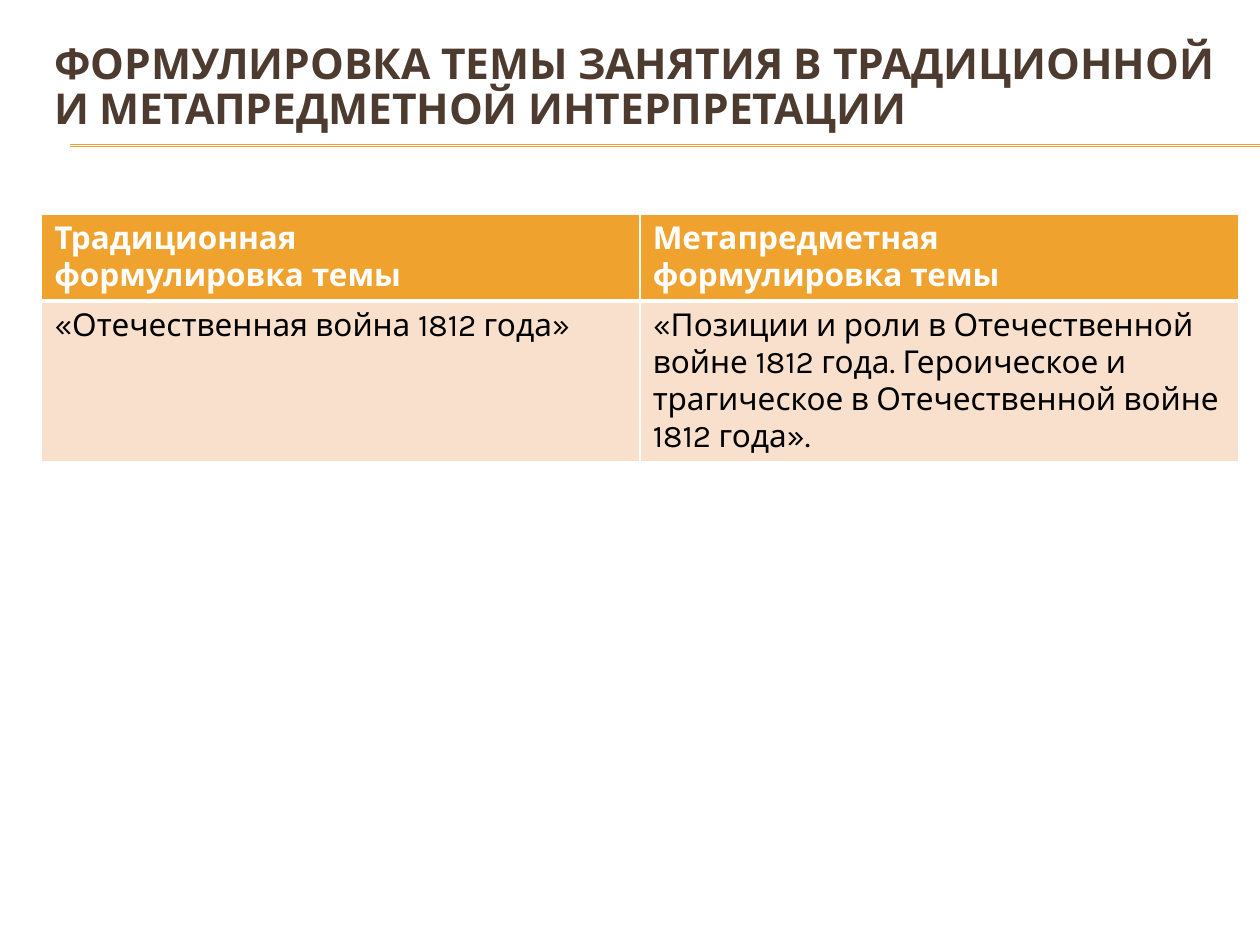
from lxml import etree
from pptx import Presentation
from pptx.dml.color import RGBColor
from pptx.enum import shapes, text
from pptx.oxml import ns
from pptx.util import Cm, Pt

# Content
TITLE = "ФОРМУЛИРОВКА ТЕМЫ ЗАНЯТИЯ В ТРАДИЦИОННОЙ И МЕТАПРЕДМЕТНОЙ ИНТЕРПРЕТАЦИИ"
ROWS = [
    ["Традиционная\nформулировка темы", "Метапредметная\nформулировка темы"],
    ["«Отечественная война 1812 года»",
     "«Позиции и роли в Отечественной войне 1812 года. "
     "Героическое и трагическое в Отечественной войне 1812 года»."],
]

# Look
FONT = "Karla"
BROWN = RGBColor(0x4E, 0x3B, 0x30)
ORANGE = RGBColor(0xF0, 0xA2, 0x2E)
PEACH = RGBColor(0xF9, 0xE0, 0xCD)
WHITE = RGBColor(0xFF, 0xFF, 0xFF)
BLACK = RGBColor(0, 0, 0)
# fill, text colour, bold, bottom border in points
ROW_STYLES = [(ORANGE, WHITE, True, 3), (PEACH, BLACK, False, 1)]
ROW_HEIGHTS = [Cm(1.71), Cm(3.23)]
LEFT, WIDTH = Cm(0.84), Cm(24.13)


def format_text(frame, size, color, bold):
    for para in frame.paragraphs:
        for span in para.runs:
            span.font.name = FONT
            span.font.size = Pt(size)
            span.font.bold = bold
            span.font.color.rgb = color


def add_border(cell, side, width):
    line = etree.Element(ns.qn("a:" + side), w=str(Pt(width)))
    fill = etree.SubElement(line, ns.qn("a:solidFill"))
    etree.SubElement(fill, ns.qn("a:srgbClr"), val=str(WHITE))
    return line


def style_cell(cell, fill, color, bold, bottom):
    cell.fill.solid()
    cell.fill.fore_color.rgb = fill
    format_text(cell.text_frame, 18, color, bold)
    # Borders come before the fill in the cell properties
    widths = {"lnL": 1, "lnR": 1, "lnT": 1, "lnB": bottom}
    for index, (side, width) in enumerate(widths.items()):
        cell._tc.get_or_add_tcPr().insert(index, add_border(cell, side, width))


deck = Presentation()
deck.slide_width, deck.slide_height = Cm(25.4), Cm(19.05)
page = deck.slides.add_slide(deck.slide_layouts[5])

# Double rule under the title
for y in (Cm(2.92), Cm(2.95)):
    rule = page.shapes.add_connector(
        shapes.MSO_CONNECTOR.STRAIGHT, Cm(1.42), y, deck.slide_width, y)
    rule.line.color.rgb = ORANGE
    rule.line.width = Pt(0.75)
    etree.SubElement(rule._element.spPr, ns.qn("a:effectLst"))

# Title, raised above the rule by its bottom margin
title = page.shapes.title
title.left, title.top, title.width, title.height = LEFT, Cm(1.27), WIDTH, Cm(2.34)
frame = title.text_frame
frame.text = TITLE
frame.word_wrap = True
frame.auto_size = text.MSO_AUTO_SIZE.NONE
frame.vertical_anchor = text.MSO_ANCHOR.MIDDLE
frame.margin_bottom = Cm(1.45)
frame.paragraphs[0].alignment = text.PP_ALIGN.LEFT
frame.paragraphs[0].line_spacing = 0.88
format_text(frame, 24.3, BROWN, True)

# Comparison table
table = page.shapes.add_table(
    len(ROWS), len(ROWS[0]), LEFT, Cm(4.32), WIDTH, sum(ROW_HEIGHTS)).table
for row, height, values, style in zip(table.rows, ROW_HEIGHTS, ROWS, ROW_STYLES):
    row.height = height
    for cell, value in zip(row.cells, values):
        cell.text_frame.text = value
        style_cell(cell, *style)

deck.save("out.pptx")
